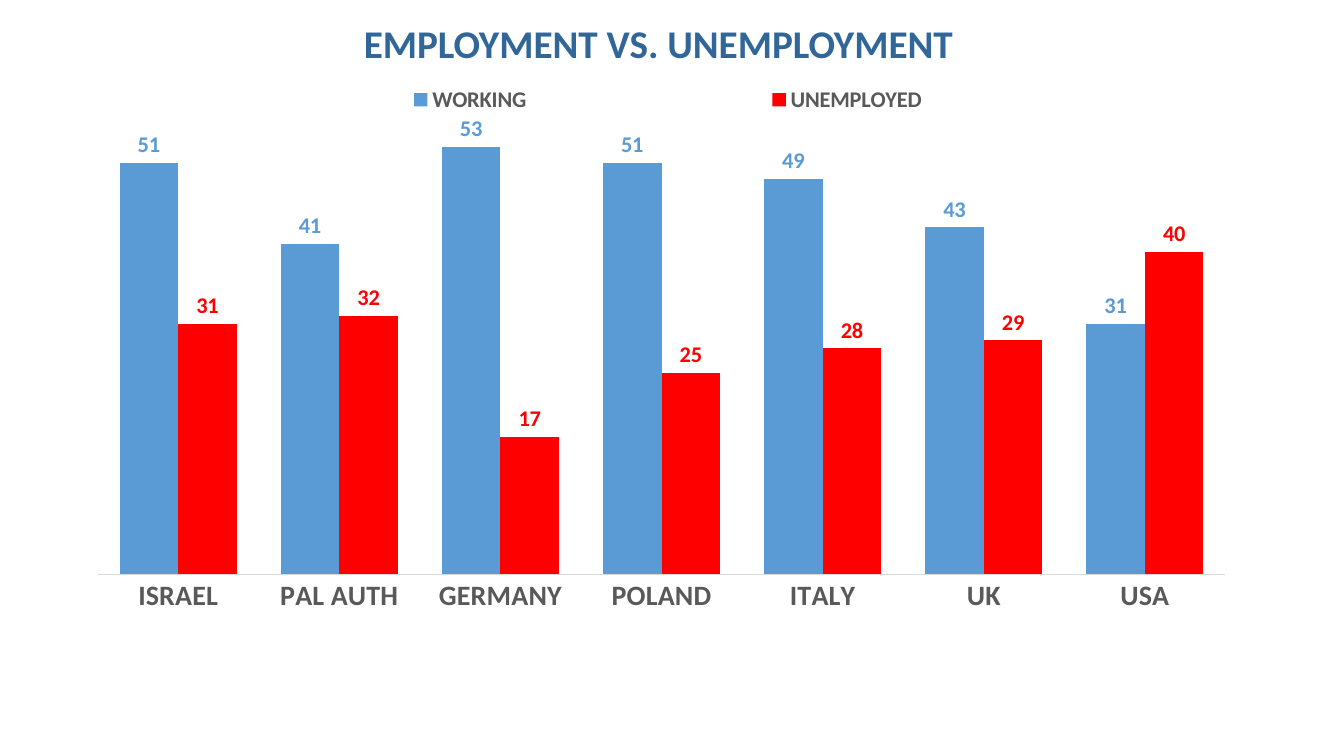
from dataclasses import dataclass

from pptx import Presentation
from pptx import util as u
from pptx.chart.data import CategoryChartData
from pptx.dml.color import RGBColor
from pptx.enum import chart as charts, text
from pptx.oxml import parse_xml
from pptx.oxml.ns import nsdecls, qn


@dataclass(frozen=True)
class Theme:
    font: str = "Calibri"
    title: str = "306698"
    grey: str = "595959"
    axis_line: str = "D9D9D9"
    working: str = "5B9BD5"
    unemployed: str = "FF0000"
    title_size: float = 28
    category_size: float = 20
    label_size: float = 16


def set_font(font, name, size, color, bold=True):
    font.name, font.size, font.bold = name, u.Pt(size), bold
    font.color.rgb = RGBColor.from_string(color)


def write_text(frame, content, *, font, size, color, align, spacing):
    frame.text = content
    frame.word_wrap = True
    frame.auto_size = text.MSO_AUTO_SIZE.NONE
    frame.vertical_anchor = text.MSO_ANCHOR.MIDDLE
    paragraph = frame.paragraphs[0]
    paragraph.alignment, paragraph.line_spacing = align, spacing
    set_font(paragraph.runs[0].font, font, size, color)


def set_layout(parent, index, box, inner=False):
    """Place a chart part by fractions of the chart area."""
    for old in parent.findall(qn("c:layout")):
        parent.remove(old)
    target = '<c:layoutTarget val="inner"/>' if inner else ""
    modes = "".join(f'<c:{side}Mode val="edge"/>' for side in "xy")
    sizes = "".join(f'<c:{key} val="{value}"/>' for key, value in zip("xywh", box))
    parent.insert(index, parse_xml(
        f'<c:layout {nsdecls("c")}><c:manualLayout>{target}{modes}{sizes}'
        "</c:manualLayout></c:layout>"))


class SlideBuilder:
    def __init__(self, presentation, theme):
        self.theme = theme
        self.slide = presentation.slides.add_slide(presentation.slide_layouts[5])

    def title(self, content, left, top, width, height):
        shape = self.slide.shapes.title
        shape.left, shape.top = u.Pt(left), u.Pt(top)
        shape.width, shape.height = u.Pt(width), u.Pt(height)
        write_text(shape.text_frame, content, font=self.theme.font,
                   size=self.theme.title_size, color=self.theme.title,
                   align=text.PP_ALIGN.CENTER, spacing=0.9)

    def column_chart(self, categories, series, left, top, width, height):
        theme = self.theme
        data = CategoryChartData(number_format="General")
        data.categories = categories
        for name, _, values in series:
            data.add_series(name, values)
        chart = self.slide.shapes.add_chart(
            charts.XL_CHART_TYPE.COLUMN_CLUSTERED, u.Pt(left), u.Pt(top),
            u.Pt(width), u.Pt(height), data).chart
        chart.has_title = False
        set_font(chart.font, theme.font, 10, "000000", bold=False)

        # Columns and their value labels
        plot = chart.plots[0]
        plot.gap_width, plot.overlap, plot.vary_by_categories = 75, 0, False
        for columns, (_, color, _) in zip(plot.series, series):
            columns.format.fill.solid()
            columns.format.fill.fore_color.rgb = RGBColor.from_string(color)
            labels = columns.data_labels
            labels.show_value = True
            labels.position = charts.XL_LABEL_POSITION.OUTSIDE_END
            set_font(labels.font, theme.font, theme.label_size, color)

        # Axes
        category_axis, value_axis = chart.category_axis, chart.value_axis
        category_axis.major_tick_mark = charts.XL_TICK_MARK.NONE
        category_axis.format.line.color.rgb = RGBColor.from_string(theme.axis_line)
        category_axis.format.line.width = u.Pt(0.75)
        set_font(category_axis.tick_labels.font, theme.font,
                 theme.category_size, theme.grey)
        value_axis.minimum_scale, value_axis.maximum_scale = 0, 60
        value_axis.has_major_gridlines = False
        value_axis.visible = False
        return chart

    def legend(self, chart, box):
        chart.has_legend = True
        legend = chart.legend
        legend.position = charts.XL_LEGEND_POSITION.BOTTOM
        legend.include_in_layout = False
        set_font(legend.font, self.theme.font, self.theme.label_size, self.theme.grey)
        set_layout(legend._element, 1, box)


def main():
    presentation = Presentation()
    presentation.slide_width, presentation.slide_height = u.Pt(960), u.Pt(540)
    theme = Theme()
    builder = SlideBuilder(presentation, theme)

    # Title
    builder.title("EMPLOYMENT VS. UNEMPLOYMENT", 22.3, 13, 895.7, 38.9)

    # Chart
    countries = ["ISRAEL", "PAL AUTH", "GERMANY", "POLAND", "ITALY", "UK", "USA"]
    series = [
        ("WORKING", theme.working, (51, 41, 53, 51, 49, 43, 31)),
        ("UNEMPLOYED", theme.unemployed, (31, 32, 17, 25, 28, 29, 40)),
    ]
    chart = builder.column_chart(countries, series, 59, 44.6, 828, 444.2)
    builder.legend(chart, (0.08, 0.03, 0.85, 0.06))
    plot_area = chart.plots[0]._element.getparent()
    set_layout(plot_area, 0, (0.013, 0.045, 0.973, 0.778), inner=True)

    presentation.save("out.pptx")


if __name__ == "__main__":
    main()
